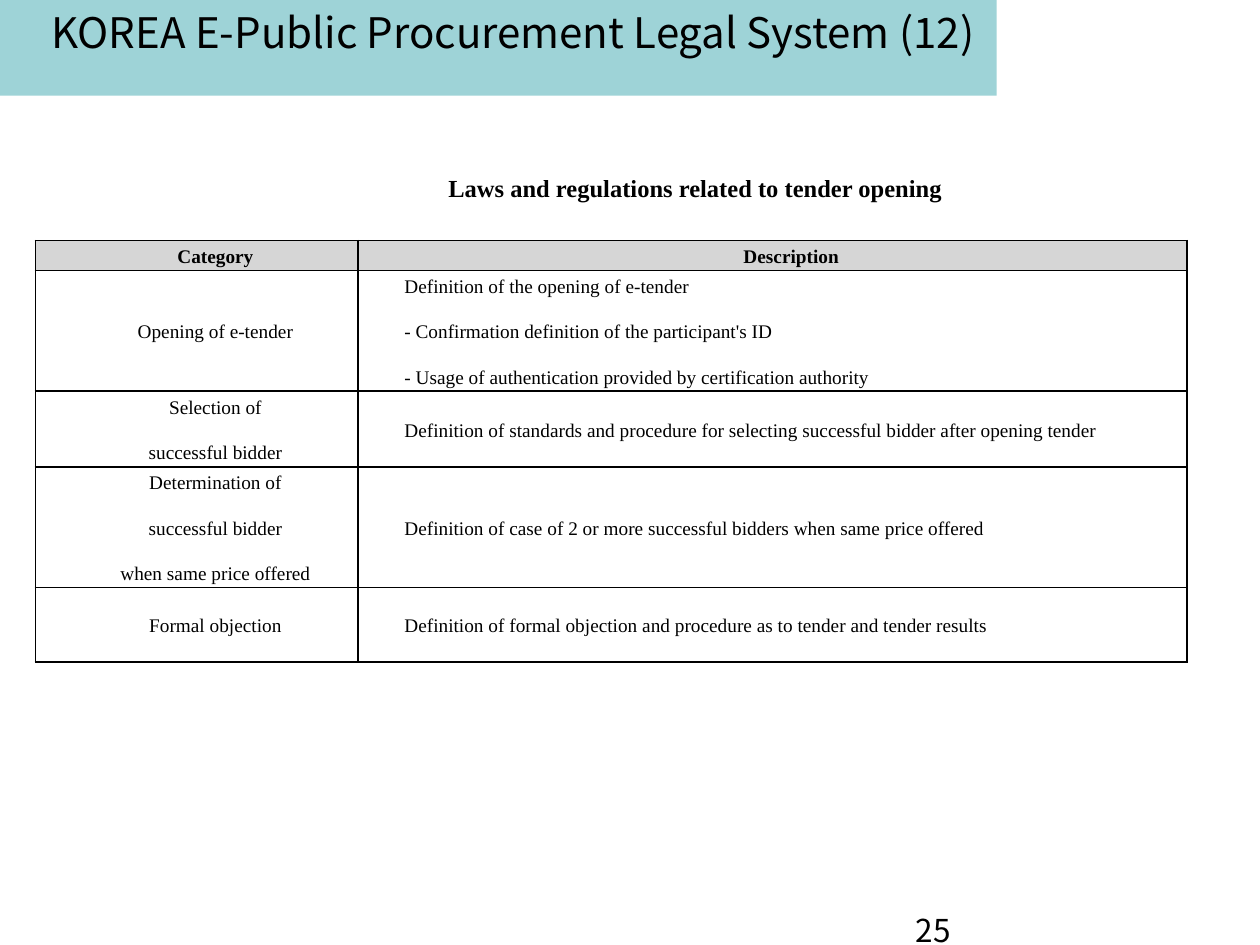
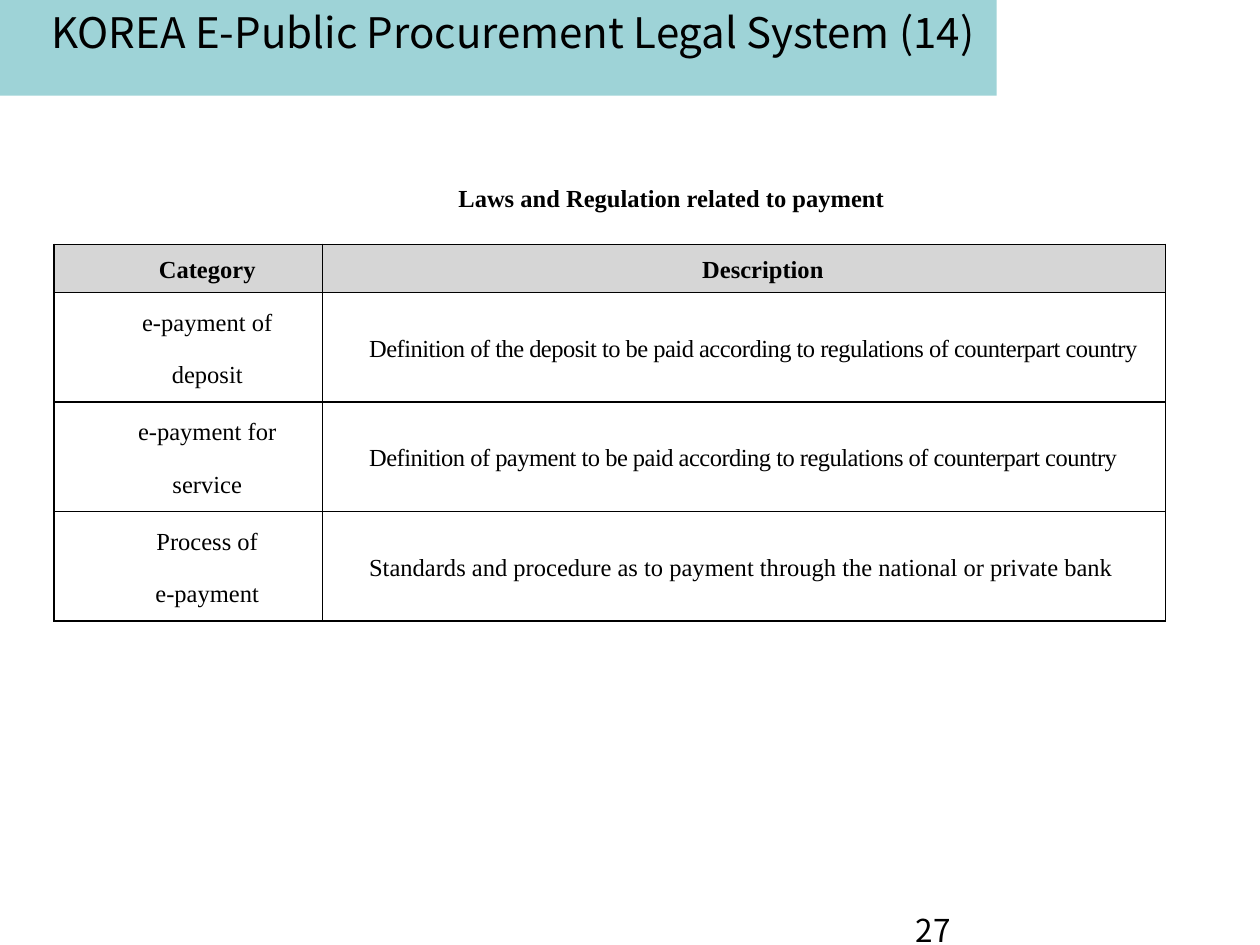
from dataclasses import dataclass

from lxml.etree import SubElement
from pptx import Presentation
from pptx.dml.color import RGBColor
from pptx.enum.shapes import MSO_SHAPE
from pptx.enum.text import MSO_ANCHOR, MSO_AUTO_SIZE, PP_ALIGN
from pptx.oxml.ns import qn
from pptx.util import Emu, Inches, Pt

COLORS = {"band": "9ED3D7", "header": "D6D6D6", "ink": "000000"}
HEADING_FONT = "Noto Sans CJK KR"
BODY_FONT = "Times New Roman"

# The slide is a grid of 100 columns by 75 rows
COLUMNS, ROWS = 100, 75
SLIDE_WIDTH, SLIDE_HEIGHT = Inches(10), Inches(7.5)


def cols(count: float) -> Emu:
    return Emu(round(SLIDE_WIDTH * count / COLUMNS))


def rows(count: float) -> Emu:
    return Emu(round(SLIDE_HEIGHT * count / ROWS))


@dataclass(frozen=True)
class Area:
    left: float
    top: float
    width: float
    height: float

    def box(self) -> tuple[Emu, Emu, Emu, Emu]:
        return cols(self.left), rows(self.top), cols(self.width), rows(self.height)


@dataclass(frozen=True)
class Style:
    font: str
    size: float
    bold: bool = False
    spacing: float = 0


@dataclass(frozen=True)
class Law:
    category: tuple[str, ...]
    description: tuple[str, ...]
    spacing: float = 0


@dataclass(frozen=True)
class LawSlide:
    chapter: int
    page: int
    caption: str
    caption_area: Area
    table_left: float
    table_top: float
    column_widths: tuple[float, float]
    row_heights: tuple[float, ...]
    text_size: float
    laws: tuple[Law, ...]


BAND = Area(0, 0, 79.1, 7.6)
TITLE = Area(-4.3, 0, 90, 6)
PAGE_NUMBER = Area(71.7, 71.8, 23.3, 3.2)
TITLE_STYLE = Style(HEADING_FONT, 24)
PAGE_STYLE = Style(HEADING_FONT, 18)
CAPTION_STYLE = Style(BODY_FONT, 14, bold=True)

LAW_SLIDES = (
    LawSlide(
        12, 25, "Laws and regulations related to tender opening",
        Area(34.6, 13.1, 44.6, 3.6), 2.8, 19.1, (25.6, 65.8),
        (2.3, 9.6, 6, 9.6, 5.9), 11,
        (
            Law(("Opening of e-tender",),
                ("Definition of the opening of e-tender",
                 "- Confirmation definition of the participant's ID",
                 "- Usage of authentication provided by certification authority")),
            Law(("Selection of", "successful bidder"),
                ("Definition of standards and procedure for selecting "
                 "successful bidder after opening tender",)),
            Law(("Determination of", "successful bidder", "when same price offered"),
                ("Definition of case of 2 or more successful bidders "
                 "when same price offered",)),
            Law(("Formal objection",),
                ("Definition of formal objection and procedure "
                 "as to tender and tender results",)),
        ),
    ),
    LawSlide(
        14, 27, "Laws and Regulation related to payment",
        Area(35.4, 13.9, 37.7, 3.6), 4.3, 19.4, (21.3, 66.9),
        (3.8, 8.7, 8.7, 8.7), 14,
        (
            Law(("e-payment of", "deposit"),
                ("Definition of the deposit to be paid according to "
                 "regulations of counterpart country",), -0.3),
            Law(("e-payment for", "service"),
                ("Definition of payment to be paid according to "
                 "regulations of counterpart country",), -0.3),
            Law(("Process of", "e-payment"),
                ("Standards and procedure as to payment through "
                 "the national or private bank",)),
        ),
    ),
)


def color(name: str) -> RGBColor:
    return RGBColor.from_string(COLORS[name])


def add_run(paragraph, text: str, style: Style) -> None:
    run = paragraph.add_run()
    run.text = text
    run.font.name = style.font
    run.font.size = Pt(style.size)
    run.font.bold = style.bold
    run.font.color.rgb = color("ink")
    if style.spacing:
        run._r.get_or_add_rPr().set("spc", str(round(style.spacing * 100)))


def fill_frame(frame, text: str, style: Style, align: PP_ALIGN, anchor: MSO_ANCHOR) -> None:
    frame.word_wrap = True
    frame.auto_size = MSO_AUTO_SIZE.NONE
    frame.vertical_anchor = anchor
    paragraph = frame.paragraphs[0]
    paragraph.alignment = align
    add_run(paragraph, text, style)


def add_label(slide, area: Area, text: str, style: Style, anchor: MSO_ANCHOR) -> None:
    frame = slide.shapes.add_textbox(*area.box()).text_frame
    fill_frame(frame, text, style, PP_ALIGN.LEFT, anchor)


def add_title(slide, chapter: int) -> None:
    title = slide.shapes.title
    title.left, title.top, title.width, title.height = TITLE.box()
    fill_frame(title.text_frame, f"KOREA E-Public Procurement Legal System ({chapter})",
               TITLE_STYLE, PP_ALIGN.CENTER, MSO_ANCHOR.TOP)

    # Band goes behind the title
    band = slide.shapes.add_shape(MSO_SHAPE.RECTANGLE, *BAND.box())
    band.shadow.inherit = False
    band.fill.solid()
    band.fill.fore_color.rgb = color("band")
    band.line.fill.background()
    title.element.addprevious(band.element)


def add_borders(cell) -> None:
    properties = cell._tc.get_or_add_tcPr()
    for side in ("lnL", "lnR", "lnT", "lnB"):
        line = SubElement(properties, qn(f"a:{side}"), w=str(Pt(1)))
        fill = SubElement(line, qn("a:solidFill"))
        SubElement(fill, qn("a:srgbClr"), val=COLORS["ink"])


def fill_cell(cell, lines: tuple[str, ...], style: Style, align: PP_ALIGN,
              header: bool) -> None:
    cell.vertical_anchor = MSO_ANCHOR.MIDDLE
    cell.margin_left = cell.margin_right = cols(0.7)
    cell.margin_top = cell.margin_bottom = rows(0.2)
    add_borders(cell)
    if header:
        cell.fill.solid()
        cell.fill.fore_color.rgb = color("header")
    else:
        cell.fill.background()
    frame = cell.text_frame
    for index, line in enumerate(lines):
        paragraph = frame.add_paragraph() if index else frame.paragraphs[0]
        paragraph.alignment = align
        paragraph.line_spacing = 1.15
        paragraph.space_before = Pt(12 if index else 0)
        properties = paragraph._p.get_or_add_pPr()
        properties.set("marL", str(cols(3)))
        properties.set("indent", "0")
        add_run(paragraph, line, style)


def add_law_table(slide, content: LawSlide) -> None:
    area = Area(content.table_left, content.table_top,
                sum(content.column_widths), sum(content.row_heights))
    table = slide.shapes.add_table(
        len(content.row_heights), len(content.column_widths), *area.box()).table
    table.first_row = table.horz_banding = False
    for column, width in zip(table.columns, content.column_widths):
        column.width = cols(width)
    for row, height in zip(table.rows, content.row_heights):
        row.height = rows(height)

    # Header row
    header_style = Style(BODY_FONT, content.text_size, bold=True)
    for index, heading in enumerate(("Category", "Description")):
        fill_cell(table.cell(0, index), (heading,), header_style, PP_ALIGN.CENTER, True)

    # One row for each law
    category_style = Style(BODY_FONT, content.text_size)
    for index, law in enumerate(content.laws, start=1):
        description_style = Style(BODY_FONT, content.text_size, spacing=law.spacing)
        fill_cell(table.cell(index, 0), law.category, category_style,
                  PP_ALIGN.CENTER, False)
        fill_cell(table.cell(index, 1), law.description, description_style,
                  PP_ALIGN.JUSTIFY, False)


def add_law_slide(presentation, content: LawSlide) -> None:
    title_only = presentation.slide_layouts.get_by_name("Title Only")
    slide = presentation.slides.add_slide(title_only)
    add_title(slide, content.chapter)
    add_label(slide, PAGE_NUMBER, str(content.page), PAGE_STYLE, MSO_ANCHOR.TOP)
    add_law_table(slide, content)
    add_label(slide, content.caption_area, content.caption, CAPTION_STYLE,
              MSO_ANCHOR.MIDDLE)


def main() -> None:
    presentation = Presentation()
    presentation.slide_width, presentation.slide_height = SLIDE_WIDTH, SLIDE_HEIGHT
    for content in LAW_SLIDES:
        add_law_slide(presentation, content)
    presentation.save("out.pptx")


if __name__ == "__main__":
    main()
